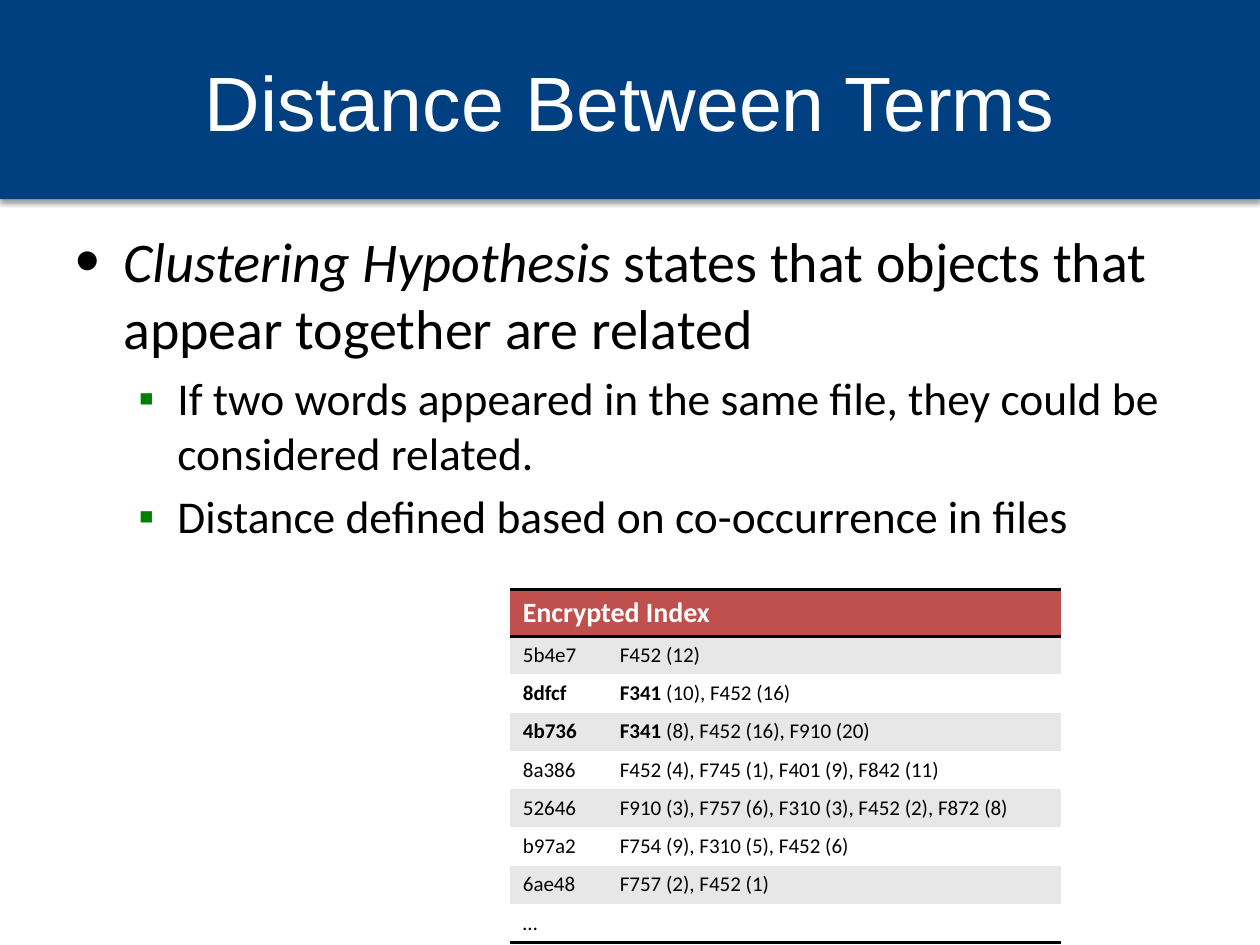
from lxml import etree
from pptx import Presentation
from pptx.dml.color import RGBColor
from pptx.enum.shapes import MSO_SHAPE
from pptx.enum.text import MSO_ANCHOR, PP_ALIGN
from pptx.oxml import parse_xml
from pptx.oxml.ns import nsdecls, qn
from pptx.util import Inches, Pt

NAVY = RGBColor(0x00, 0x40, 0x80)
WHITE = RGBColor(0xFF, 0xFF, 0xFF)
BLACK = RGBColor(0x00, 0x00, 0x00)
GREEN = RGBColor(0x00, 0x80, 0x00)
RED = RGBColor(0xC0, 0x50, 0x4D)
BAND_GRAY = RGBColor(0xE7, 0xE7, 0xE7)

PLAIN_TABLE_STYLE = "{2D5ABB26-0587-4C30-8999-92F81FD0307C}"

# Each paragraph: level, [(text, italic)]
POINTS = [
    (0, [("Clustering Hypothesis", True),
         (" states that objects that appear together are related", False)]),
    (1, [("If two words appeared in the same file, they could be considered related.", False)]),
    (1, [("Distance defined based on co-occurrence in files", False)]),
]
# Per level: font size, left margin, hanging indent, bullet, its colour, its size in percent
LEVELS = [
    (32, 0.38, 0.38, "•", BLACK, 125),
    (26, 0.81, 0.31, "▪", GREEN, 100),
]

# Each row: key, bold part of the postings, rest of the postings
INDEX = [
    ("5b4e7", "", "F452 (12)"),
    ("8dfcf", "F341", " (10), F452 (16)"),
    ("4b736", "F341", " (8), F452 (16), F910 (20)"),
    ("8a386", "", "F452 (4), F745 (1), F401 (9), F842 (11)"),
    ("52646", "", "F910 (3), F757 (6), F310 (3), F452 (2), F872 (8)"),
    ("b97a2", "", "F754 (9), F310 (5), F452 (6)"),
    ("6ae48", "", "F757 (2), F452 (1)"),
    ("…", "", ""),
]


def set_font(paragraph, name, size, color):
    font = paragraph.font
    font.name, font.size = name, Pt(size)
    font.color.rgb = color


def add_title_banner(slide, left, top, width, height):
    banner = slide.shapes.add_shape(MSO_SHAPE.RECTANGLE, left, top, width, height)
    banner.fill.solid()
    banner.fill.fore_color.rgb = NAVY
    banner.line.fill.background()
    banner.shadow.inherit = False
    effects = banner._element.spPr.find(qn("a:effectLst"))
    effects.append(parse_xml(
        f'<a:outerShdw {nsdecls("a")} blurRad="{Pt(3.1)}" dist="{Pt(1.6)}" dir="5400000" rotWithShape="0">'
        '<a:srgbClr val="000000"><a:alpha val="38000"/></a:srgbClr></a:outerShdw>'))

    title = slide.shapes.add_textbox(left + Inches(0.5), top + Inches(0.17),
                                     width - Inches(1), Inches(1.25)).text_frame
    title.word_wrap = True
    title.vertical_anchor = MSO_ANCHOR.MIDDLE
    heading = title.paragraphs[0]
    heading.text = "Distance Between Terms"
    heading.alignment = PP_ALIGN.CENTER
    set_font(heading, "Arial", 44, WHITE)


def add_bullet(paragraph, margin, hanging, char, color, percent):
    props = paragraph._p.get_or_add_pPr()
    props.set("marL", str(Inches(margin)))
    props.set("indent", str(-Inches(hanging)))
    bullet_color = etree.SubElement(props, qn("a:buClr"))
    etree.SubElement(bullet_color, qn("a:srgbClr"), val=str(color))
    etree.SubElement(props, qn("a:buSzPct"), val=str(percent * 1000))
    etree.SubElement(props, qn("a:buFont"), typeface="Arial")
    etree.SubElement(props, qn("a:buChar"), char=char)


def add_points(slide, left, top, width, height):
    body = slide.shapes.add_textbox(left, top, width, height).text_frame
    body.word_wrap = True
    for number, (level, runs) in enumerate(POINTS):
        point = body.add_paragraph() if number else body.paragraphs[0]
        size, *bullet = LEVELS[level]
        point.level = level
        if number:
            point.space_before = Pt(size * 0.2)
        add_bullet(point, *bullet)
        set_font(point, "Calibri", size, BLACK)
        for text, italic in runs:
            run = point.add_run()
            run.text = text
            if italic:
                run.font.italic = True


def fill_cell(cell, runs, fill, size=12, color=BLACK):
    """Write (text, bold) runs into a cell and colour its ground."""
    cell.fill.solid()
    cell.fill.fore_color.rgb = fill
    paragraph = cell.text_frame.paragraphs[0]
    set_font(paragraph, "Calibri", size, color)
    for text, bold in runs:
        if text:
            run = paragraph.add_run()
            run.text = text
            run.font.bold = bold


def rule_cell(cell, *sides):
    """Draw black 2 pt borders; sides are lnT and lnB, in that order."""
    for position, side in enumerate(sides):
        cell._tc.get_or_add_tcPr().insert(position, parse_xml(
            f'<a:{side} {nsdecls("a")} w="{Pt(2)}"><a:solidFill>'
            f'<a:srgbClr val="{BLACK}"/></a:solidFill></a:{side}>'))


def add_index_table(slide, left, top, width, height):
    header_height = Inches(0.37)
    key_width = Inches(0.77)
    table = slide.shapes.add_table(len(INDEX) + 1, 2, left, top, width, height).table
    table._tbl.tblPr.find(qn("a:tableStyleId")).text = PLAIN_TABLE_STYLE
    table.first_row = table.horz_banding = False
    table.columns[0].width = key_width
    table.columns[1].width = width - key_width
    for number, row in enumerate(table.rows):
        row.height = (height - header_height) // len(INDEX) if number else header_height

    header = table.cell(0, 0)
    header.merge(table.cell(0, 1))
    fill_cell(header, [("Encrypted Index", True)], RED, 16, WHITE)
    for number, (key, match, postings) in enumerate(INDEX, 1):
        band = BAND_GRAY if number % 2 else WHITE
        fill_cell(table.cell(number, 0), [(key, bool(match))], band)
        fill_cell(table.cell(number, 1), [(match, True), (postings, False)], band)
    for column in range(2):
        rule_cell(table.cell(0, column), "lnT", "lnB")
        rule_cell(table.cell(len(INDEX), column), "lnB")


def main():
    deck = Presentation()
    deck.slide_width, deck.slide_height = Inches(10), Inches(7.5)
    slide = deck.slides.add_slide(deck.slide_layouts[6])
    add_title_banner(slide, 0, 0, deck.slide_width, Inches(1.58))
    add_points(slide, Inches(0.5), Inches(1.75), Inches(9), Inches(4.95))
    add_index_table(slide, Inches(4.05), Inches(4.68), Inches(4.37), Inches(2.8))
    deck.save("out.pptx")


if __name__ == "__main__":
    main()
